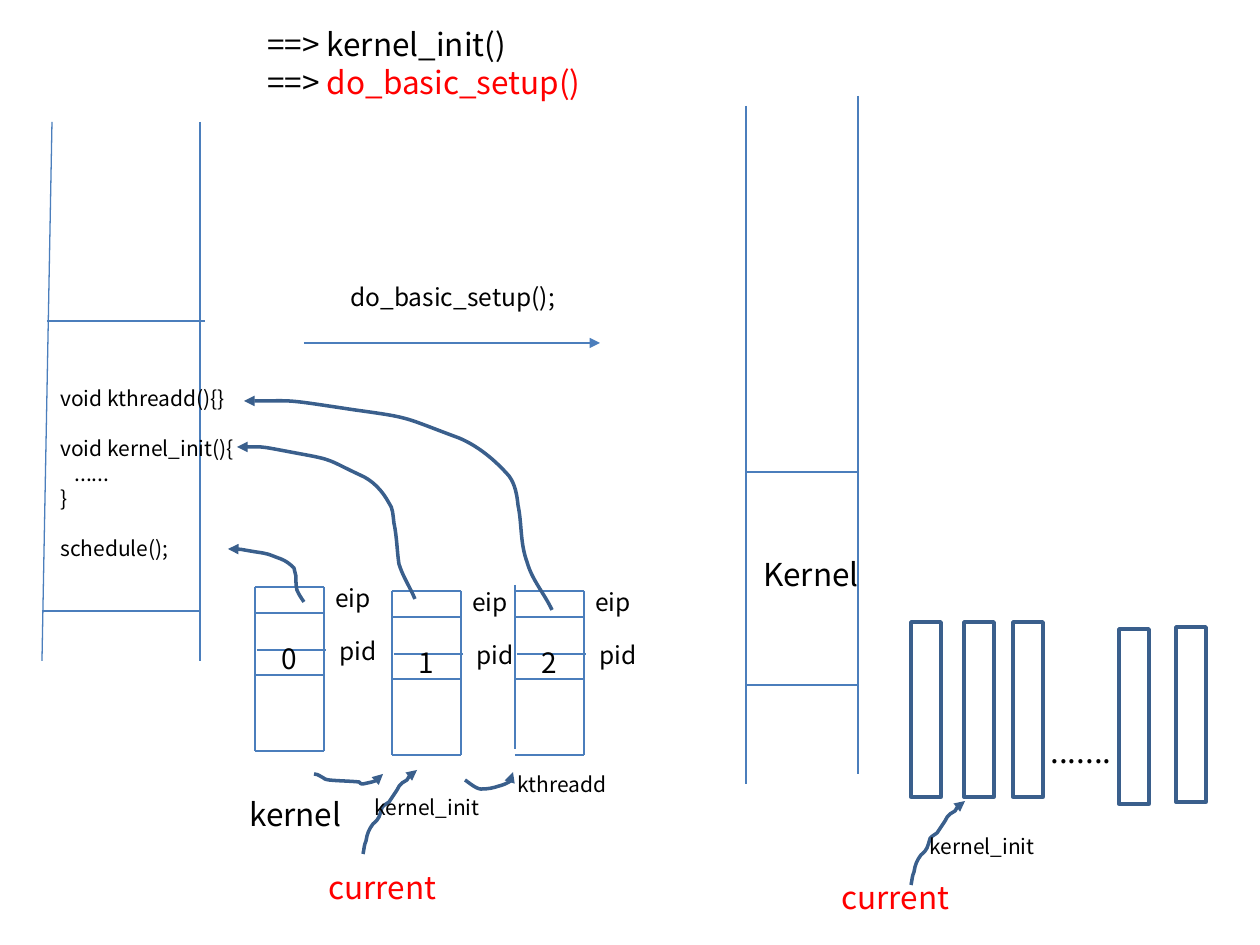
import dataclasses
import typing

import lxml.etree
import pptx
import pptx.dml.color
import pptx.enum.shapes
import pptx.enum.text
import pptx.oxml.ns
import pptx.util

SCALE = 914400 / 126
FONT = "Noto Sans CJK KR"
BLACK, RED, THIN_BLUE, DARK_BLUE = "000000", "FF0000", "4B7EBC", "3A5F8C"
qn = pptx.oxml.ns.qn


@dataclasses.dataclass
class Label:
    x: int
    y: int
    w: int
    h: int
    text: str
    size: int
    color: str = BLACK


@dataclasses.dataclass
class Line:
    x1: int
    y1: int
    x2: int
    y2: int


@dataclasses.dataclass
class Task:
    x: int
    y: int
    pid: str
    left_shift: int = 0


@dataclasses.dataclass
class Curve:
    x: int
    y: int
    segments: list[tuple[int, ...]]


def emu(px: int) -> int:
    return round(px * SCALE)


def rgb(color: str) -> pptx.dml.color.RGBColor:
    return pptx.dml.color.RGBColor.from_string(color)


def style_line(sp: typing.Any, color: str, width: float, arrow: bool = False) -> None:
    sp.line.color.rgb = rgb(color)
    sp.line.width = pptx.util.Pt(width)
    if arrow:
        ln = sp.element.spPr.find(qn("a:ln"))
        lxml.etree.SubElement(ln, qn("a:tailEnd"), type="triangle")


def format_run(r: typing.Any, size: int, color: str) -> None:
    r.font.name = FONT
    r.font.size = pptx.util.Pt(size)
    r.font.color.rgb = rgb(color)


def add_label(s: typing.Any, label: Label) -> typing.Any:
    sp = s.shapes.add_textbox(emu(label.x), emu(label.y), emu(label.w), emu(label.h))
    tf = sp.text_frame
    tf.word_wrap = True
    tf.auto_size = pptx.enum.text.MSO_AUTO_SIZE.SHAPE_TO_FIT_TEXT
    tf.text = label.text
    for p in tf.paragraphs:
        for r in p.runs:
            format_run(r, label.size, label.color)
    return tf


def add_line(s: typing.Any, line: Line, arrow: bool = False) -> None:
    sp = s.shapes.add_connector(
        pptx.enum.shapes.MSO_CONNECTOR.STRAIGHT,
        emu(line.x1), emu(line.y1), emu(line.x2), emu(line.y2),
    )
    style_line(sp, THIN_BLUE, 0.75, arrow)
    lxml.etree.SubElement(sp.element.spPr, qn("a:effectLst"))


def add_curve(s: typing.Any, curve: Curve, dx: int = 0, dy: int = 0) -> None:
    points = []
    for segment in curve.segments:
        values = segment if len(segment) == 6 else segment * 3
        points += [(x + dx, y + dy) for x, y in zip(values[::2], values[1::2])]
    builder = s.shapes.build_freeform(curve.x + dx, curve.y + dy, scale=SCALE)
    builder.add_line_segments(points, close=False)
    sp = builder.convert_to_shape()
    outline = sp.element.find(".//" + qn("a:path"))
    steps = outline.findall(qn("a:lnTo"))
    for i in range(0, len(steps), 3):
        cubic = lxml.etree.SubElement(outline, qn("a:cubicBezTo"))
        for step in steps[i:i + 3]:
            cubic.append(step[0])
            outline.remove(step)
    sp.shadow.inherit = False
    sp.fill.background()
    style_line(sp, DARK_BLUE, 2, arrow=True)


def add_task(s: typing.Any, task: Task) -> None:
    x, y, right, bottom = task.x, task.y, task.x + 69, task.y + 164
    add_line(s, Line(x, y + task.left_shift, x, bottom + task.left_shift))
    add_line(s, Line(right, y, right, bottom))
    for dx, dy in ((0, 0), (0, 26), (2, 63), (0, 88), (0, 164)):
        add_line(s, Line(x + dx, y + dy, right + dx, y + dy))
    add_label(s, Label(x + 72, y + 43, 88, 43, "pid", 14))
    add_label(s, Label(x + 14, y + 48, 72, 47, task.pid, 16))
    add_label(s, Label(x + 68, y - 10, 88, 43, "eip", 14))


def add_block(s: typing.Any, x: int, y: int) -> None:
    sp = s.shapes.add_shape(
        pptx.enum.shapes.MSO_SHAPE.RECTANGLE, emu(x), emu(y), emu(30), emu(175)
    )
    sp.shadow.inherit = False
    sp.fill.background()
    style_line(sp, DARK_BLUE, 2)


MEMORY_LINES = [
    Line(52, 122, 42, 661), Line(200, 122, 200, 661),
    Line(47, 321, 205, 321), Line(42, 611, 200, 611),
    Line(746, 106, 746, 784), Line(858, 96, 858, 774),
    Line(746, 685, 858, 685), Line(746, 472, 858, 472),
]
TASKS = [Task(255, 587, "0"), Task(392, 591, "1"), Task(515, 591, "2", -6)]
BLOCKS = [(911, 622), (964, 622), (1013, 622), (1119, 629), (1176, 627)]
LABELS = [
    Label(338, 276, 364, 43, "do_basic_setup();", 14),
    Label(237, 789, 152, 50, "kernel", 18),
    Label(362, 788, 173, 38, "kernel_init", 12),
    Label(505, 765, 173, 38, "kthreadd", 12),
    Label(917, 827, 173, 38, "kernel_init", 12),
    Label(316, 862, 152, 50, "current", 18, RED),
    Label(829, 872, 152, 50, "current", 18, RED),
    Label(1038, 726, 135, 50, ".......", 18),
    Label(751, 549, 168, 50, "Kernel", 18),
]
CURVES = [
    Curve(304, 602, [
        (302, 599, 299, 595, 297, 590), (296, 586, 296, 581, 296, 576),
        (295, 573, 295, 571, 294, 568), (290, 564, 286, 561, 281, 559),
        (267, 554, 270, 554, 256, 552), (238, 549, 242, 549, 228, 549)]),
    Curve(415, 599, [
        (410, 587, 403, 577, 399, 564), (397, 551, 397, 537, 394, 523),
        (393, 515, 393, 508, 389, 503), (382, 490, 372, 480, 360, 475),
        (328, 460, 334, 460, 301, 454), (258, 446, 268, 447, 237, 447)]),
    Curve(552, 610, [
        (544, 593, 532, 580, 527, 562), (520, 543, 522, 524, 518, 505),
        (517, 495, 515, 484, 509, 476), (495, 460, 478, 446, 459, 438),
        (402, 417, 413, 418, 355, 410), (282, 399, 299, 401, 244, 401)]),
    Curve(314, 774, [
        (316, 774, 319, 775, 320, 776), (326, 779, 323, 779, 329, 780),
        (338, 781, 349, 781, 359, 782), (360, 784, 362, 784, 363, 784),
        (372, 782), (375, 781), (377, 780, 378, 780, 379, 779),
        (381, 778, 381, 776, 381, 776), (382, 775, 382, 774, 383, 774)]),
    Curve(465, 780, [
        (467, 781, 476, 789, 481, 789), (488, 789, 493, 788, 499, 786),
        (503, 785, 508, 783, 512, 780), (513, 777, 513, 775, 513, 772)]),
]
CURRENT_POINTER = Curve(0, 0, [
    (1, -4, 1, -9, 3, -13), (4, -20, 6, -25, 10, -30),
    (13, -33, 15, -34, 16, -37), (21, -50, 16, -45, 26, -52),
    (34, -64), (35, -67, 37, -69, 39, -71), (44, -74),
    (45, -77, 47, -78, 48, -81), (50, -82, 54, -84, 54, -84)])

prs = pptx.Presentation()
prs.slide_width, prs.slide_height = emu(1260), emu(945)
s = prs.slides.add_slide(prs.slide_layouts[6])

for line in MEMORY_LINES:
    add_line(s, line)
add_line(s, Line(304, 343, 600, 343), arrow=True)
for task in TASKS:
    add_task(s, task)
for x, y in BLOCKS:
    add_block(s, x, y)
for curve in CURVES:
    add_curve(s, curve)
for x, y in ((363, 854), (911, 885)):
    add_curve(s, CURRENT_POINTER, x, y)
for label in LABELS:
    add_label(s, label)

code = "void kthreadd(){}\nvoid kernel_init(){\n......\n}\nschedule();"
tf = add_label(s, Label(48, 379, 244, 190, code, 12))
for i in (1, 4):
    tf.paragraphs[i].space_before = pptx.util.Pt(14.3)
tf.paragraphs[2]._p.get_or_add_pPr().set("marL", str(emu(14)))

tf = add_label(s, Label(255, 19, 630, 89, "==> kernel_init()\n==> ", 18))
r = tf.paragraphs[1].add_run()
r.text = "do_basic_setup()"
format_run(r, 18, RED)
for p in tf.paragraphs:
    p.alignment = pptx.enum.text.PP_ALIGN.JUSTIFY

prs.save("out.pptx")
